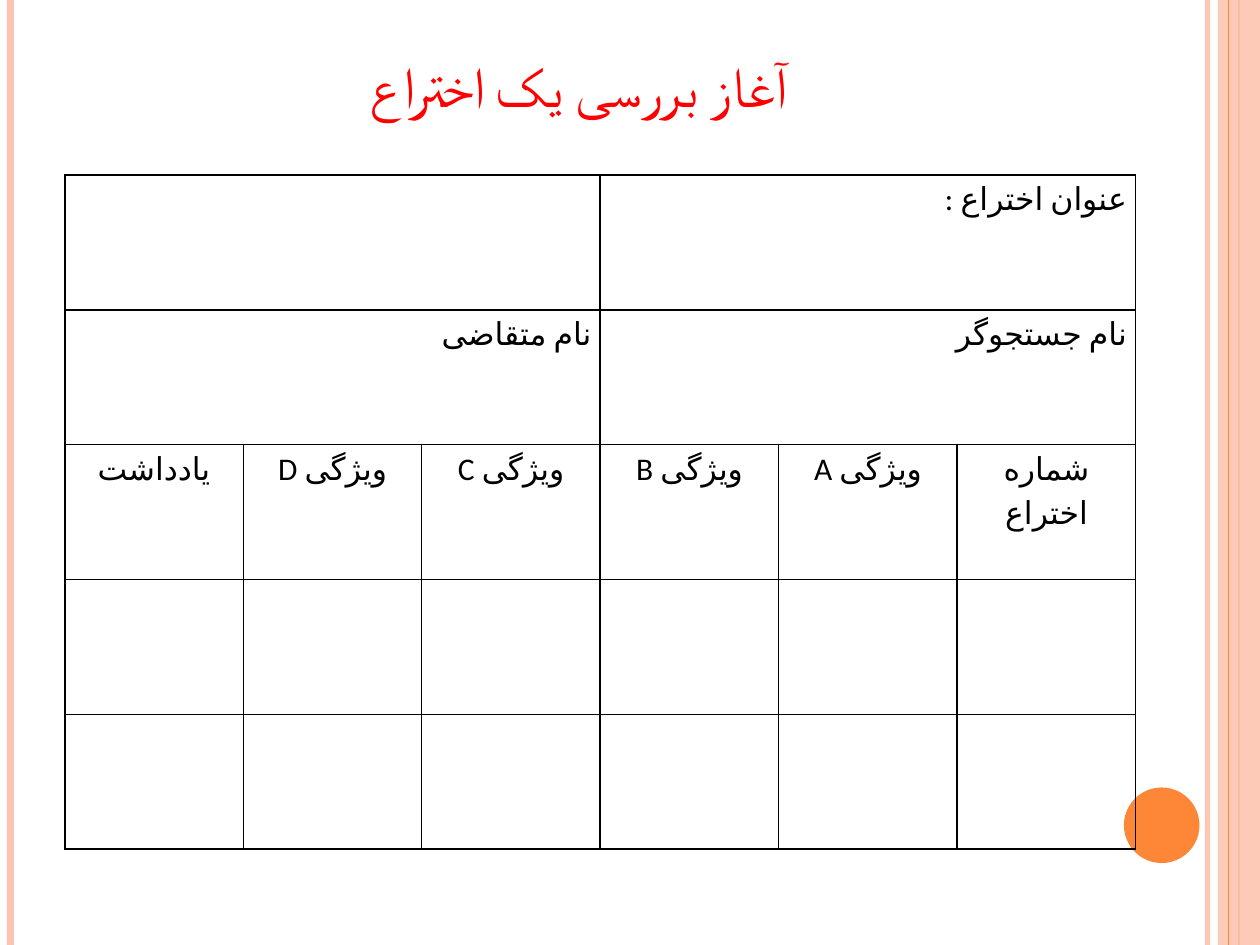
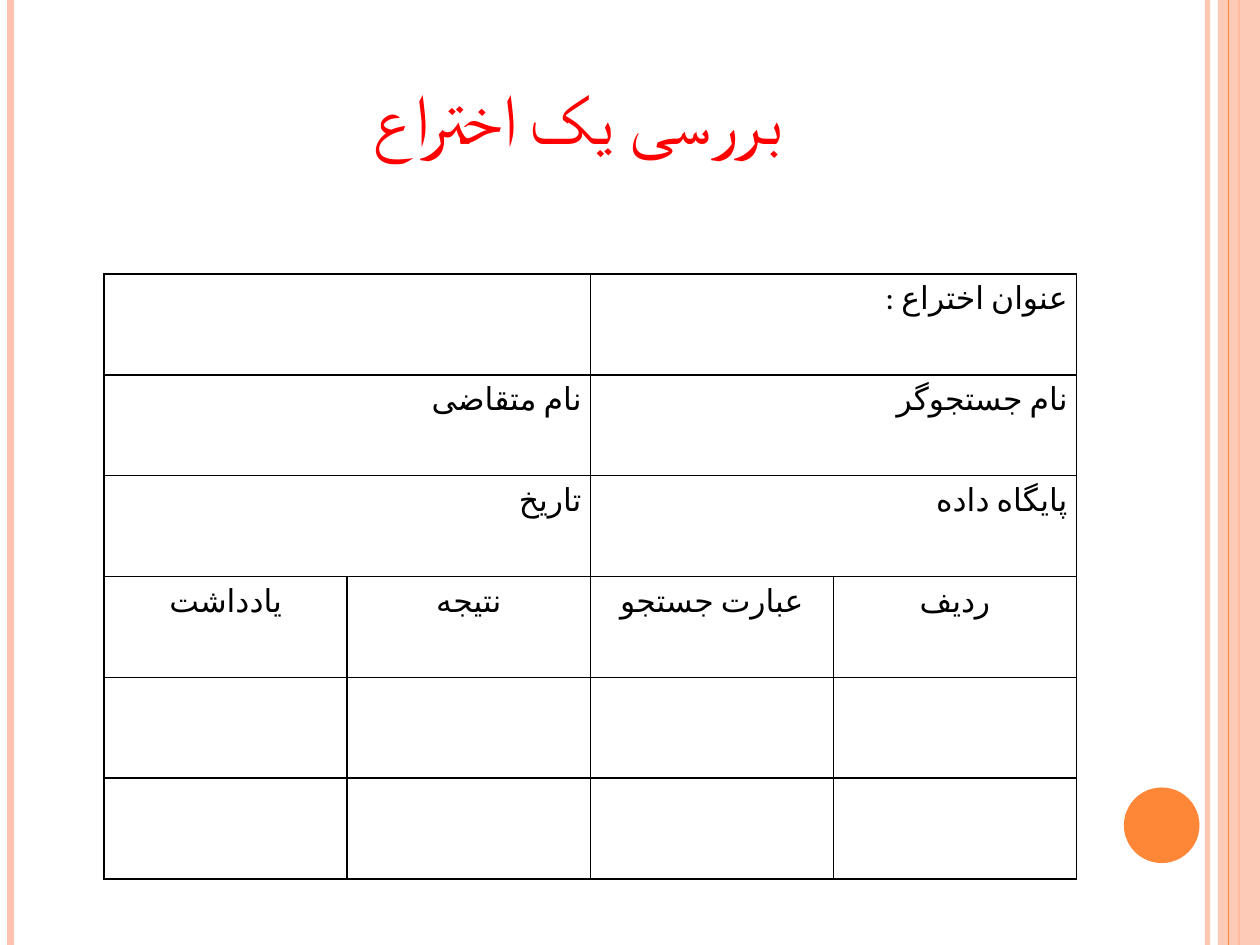
import dataclasses
import typing

import lxml.etree
import pptx
import pptx.dml.color
import pptx.enum.shapes
import pptx.enum.text
import pptx.oxml.ns
import pptx.util

Align = pptx.enum.text.PP_ALIGN
Shapes = pptx.enum.shapes.MSO_SHAPE
qn = pptx.oxml.ns.qn


@dataclasses.dataclass(frozen=True)
class Theme:
    """Colours, fonts and type sizes of both slides."""
    peach: str = "FEC3AE"
    orange: str = "FE8637"
    title_colour: str = "FF0000"
    ink: str = "000000"
    title_font: str = "Cambria"
    form_font: str = "Calibri"
    language: str = "fa-IR"
    form_size: float = 18
    rule_width: float = 1


@dataclasses.dataclass(frozen=True)
class Box:
    """A frame in columns and rows of the slide grid."""
    column: float
    row: float
    columns: float
    rows: float


@dataclasses.dataclass(frozen=True)
class Stripe:
    """A full-height line at one grid column."""
    column: float
    colour: str
    width: float
    opacity: int = 100


@dataclasses.dataclass(frozen=True)
class Panel:
    """A filled decoration."""
    kind: Shapes
    box: Box
    colour: str
    opacity: int = 100


@dataclasses.dataclass(frozen=True)
class Form:
    """A titled slide with one search form."""
    title: str
    title_size: float
    title_rows: float
    title_rtl: bool
    box: Box
    fields: tuple[tuple[str, str], ...]
    headings: tuple[str, ...]
    blank_rows: int = 2


THEME = Theme()
GRID_COLUMNS, GRID_ROWS = 120, 90
WIDTH, HEIGHT = pptx.util.Inches(10), pptx.util.Inches(7.5)
TITLE_COLUMN, TITLE_ROW, TITLE_COLUMNS = 6, 3.6, 98

DECORATION = (
    Stripe(115, THEME.peach, 3, 93),
    Stripe(1, THEME.peach, 4.5),
    Stripe(118, THEME.orange, 1.5),
    Panel(Shapes.RECTANGLE, Box(116, 0, 4, GRID_ROWS), THEME.peach, 87),
    Stripe(117, THEME.orange, 0.75),
    Panel(Shapes.OVAL, Box(107.04, 75, 7.2, 7.2), THEME.orange),
)

FIELDS = (("", "عنوان اختراع :"), ("نام متقاضی", "نام جستجوگر"))
FORMS = (
    Form("آغاز بررسی یک اختراع", 32, 8.28, False, Box(6.17, 16.68, 102, 64.2), FIELDS,
         ("یادداشت", *(f"ویژگی {letter}" for letter in "DCBA"), "شماره اختراع")),
    Form("بررسی یک اختراع", 40, 12.12, True, Box(9.92, 26.1, 92.6, 57.6),
         FIELDS + (("تاریخ", "پایگاه داده"),),
         ("یادداشت", "نتیجه", "عبارت جستجو", "ردیف")),
)


def across(columns: float) -> int:
    """Turn grid columns into a length."""
    return round(WIDTH * columns / GRID_COLUMNS)


def down(rows: float) -> int:
    """Turn grid rows into a length."""
    return round(HEIGHT * rows / GRID_ROWS)


def frame(box: Box) -> tuple[int, int, int, int]:
    """Give left, top, width and height of a box."""
    return across(box.column), down(box.row), across(box.columns), down(box.rows)


def rgb(colour: str) -> pptx.dml.color.RGBColor:
    """Turn a hex string into a colour."""
    return pptx.dml.color.RGBColor.from_string(colour)


def apply(target: typing.Any, formats: dict[str, typing.Any]) -> None:
    """Set each format value on the target."""
    for attribute, value in formats.items():
        setattr(target, attribute, value)


def fade(drawn: typing.Any, opacity: int) -> None:
    """Make the colours of a drawn element partly transparent."""
    if opacity < 100:
        for colour in drawn.element.iter(qn("a:srgbClr")):
            lxml.etree.SubElement(colour, qn("a:alpha"), val=str(opacity * 1000))


def draw_stripe(slide: typing.Any, stripe: Stripe) -> None:
    """Draw a line from the top to the bottom of the slide."""
    x = across(stripe.column)
    line = slide.shapes.add_connector(
        pptx.enum.shapes.MSO_CONNECTOR.STRAIGHT, x, 0, x, HEIGHT)
    line.line.color.rgb = rgb(stripe.colour)
    line.line.width = pptx.util.Pt(stripe.width)
    lxml.etree.SubElement(line.element.spPr, qn("a:effectLst"))
    fade(line, stripe.opacity)


def draw_panel(slide: typing.Any, panel: Panel) -> None:
    """Draw a filled shape without an outline."""
    shape = slide.shapes.add_shape(panel.kind, *frame(panel.box))
    shape.shadow.inherit = False
    shape.fill.solid()
    shape.fill.fore_color.rgb = rgb(panel.colour)
    shape.line.fill.background()
    fade(shape, panel.opacity)


def write(text_frame: typing.Any, text: str, font_name: str, size: float, colour: str,
          rtl: bool, paragraph_formats: dict[str, typing.Any]) -> typing.Any:
    """Write one formatted Persian paragraph and return its run properties."""
    paragraph = text_frame.paragraphs[0]
    apply(paragraph, paragraph_formats)
    if rtl:
        paragraph._p.get_or_add_pPr().set("rtl", "1")
    run = paragraph.add_run()
    run.text = text
    apply(run.font, {"name": font_name, "size": pptx.util.Pt(size)})
    run.font.color.rgb = rgb(colour)
    properties = run.font._element
    properties.set("lang", THEME.language)
    lxml.etree.SubElement(properties, qn("a:cs"), typeface=font_name)
    return properties


def draw_title(slide: typing.Any, form: Form) -> None:
    """Draw the centred red title in small capitals."""
    box = Box(TITLE_COLUMN, TITLE_ROW, TITLE_COLUMNS, form.title_rows)
    text_frame = slide.shapes.add_textbox(*frame(box)).text_frame
    apply(text_frame, {"word_wrap": True,
                       "vertical_anchor": pptx.enum.text.MSO_ANCHOR.BOTTOM})
    properties = write(text_frame, form.title, THEME.title_font, form.title_size,
                       THEME.title_colour, form.title_rtl, {"alignment": Align.CENTER})
    properties.set("cap", "small")


def rule_cell(cell: typing.Any) -> None:
    """Give a clear cell four thin borders."""
    properties = cell._tc.get_or_add_tcPr()
    for side in "LRTB":
        border = lxml.etree.SubElement(properties, qn(f"a:ln{side}"),
                                       w=str(pptx.util.Pt(THEME.rule_width)))
        ink = lxml.etree.SubElement(border, qn("a:solidFill"))
        lxml.etree.SubElement(ink, qn("a:srgbClr"), val=THEME.ink)
    cell.fill.background()


def draw_form(slide: typing.Any, form: Form) -> None:
    """Draw paired fields above headings and empty result rows."""
    columns = len(form.headings)
    rows = (*form.fields, form.headings, *[("",) * columns] * form.blank_rows)
    table = slide.shapes.add_table(len(rows), columns, *frame(form.box)).table
    apply(table, {"first_row": False, "horz_banding": False})
    for column in table.columns:
        column.width = across(form.box.columns / columns)
    for row in table.rows:
        row.height = down(form.box.rows / len(rows))
    for cell in table.iter_cells():
        rule_cell(cell)
        apply(cell, {"margin_left": pptx.util.Inches(0.07), "margin_top": 0,
                     "margin_right": pptx.util.Inches(0.07), "margin_bottom": 0})
    for row_index, labels in enumerate(rows):
        span = columns // len(labels)
        for label_index, label in enumerate(labels):
            first = label_index * span
            cell = table.cell(row_index, first)
            if span > 1:
                cell.merge(table.cell(row_index, first + span - 1))
            if label:
                write(cell.text_frame, label, THEME.form_font, THEME.form_size,
                      THEME.ink, True,
                      {"alignment": Align.RIGHT if span > 1 else Align.CENTER,
                       "line_spacing": 1.15})


def main() -> None:
    """Build and save the presentation."""
    deck = pptx.Presentation()
    apply(deck, {"slide_width": WIDTH, "slide_height": HEIGHT})
    for form in FORMS:
        slide = deck.slides.add_slide(deck.slide_layouts[6])
        for part in DECORATION:
            if isinstance(part, Stripe):
                draw_stripe(slide, part)
            else:
                draw_panel(slide, part)
        draw_title(slide, form)
        draw_form(slide, form)
    deck.save("out.pptx")


if __name__ == "__main__":
    main()
